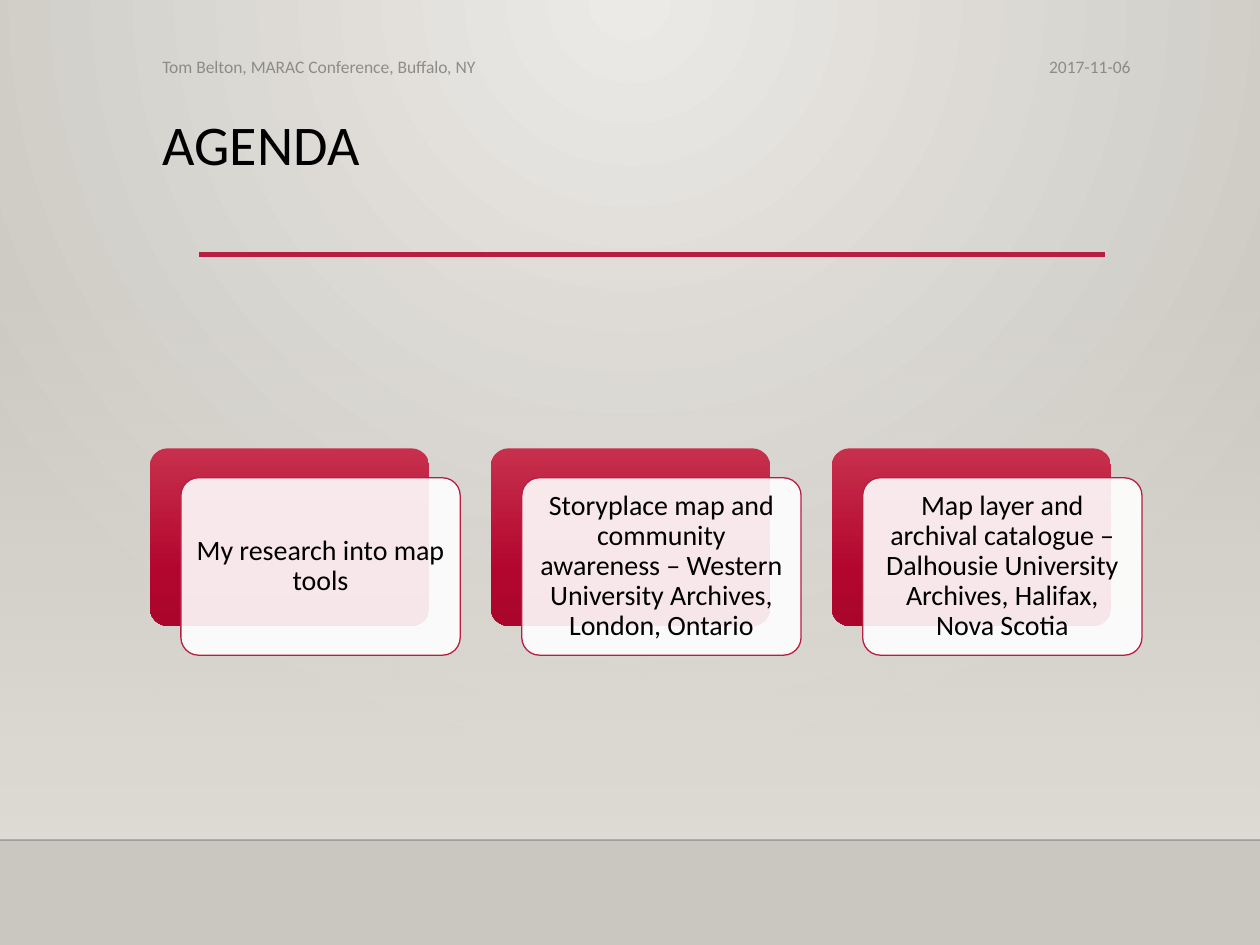
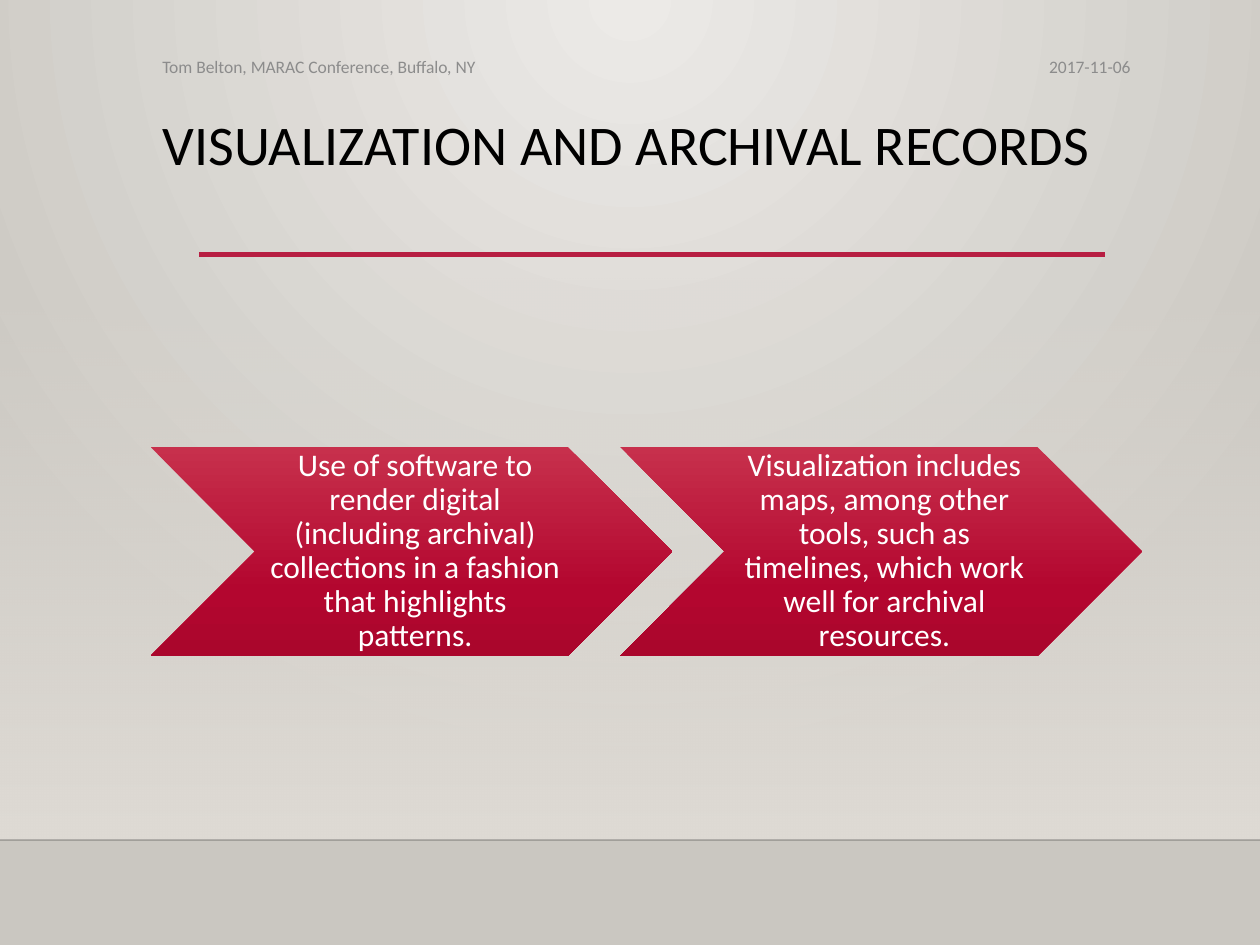
"""Builds two slides of a talk on map tools for archives."""
from pptx import Presentation
from pptx import util as u
from pptx.dml.color import RGBColor
from pptx.enum import shapes, text
from pptx.oxml import parse_xml
from pptx.oxml.ns import nsdecls, qn

Pt = u.Pt
COLORS = {
    "black": "000000", "white": "FFFFFF", "grey": "8C8C8C",
    "accent": "B71E42", "edge": "000001", "band": "DFDBD5",
    "glow": "ECEAE7", "stone": "CAC7C1",
    "red_top": "C7304C", "red_mid": "B3062F", "red_low": "AA062C",
}
RED = [(0, "red_top", 100), (69, "red_mid", 100), (100, "red_low", 100)]
BAND = [(0, "band", 0), (100, "band", 100)]
BACKDROP = [(0, "glow", 100), (100, "stone", 100)]
LINEAR = '<a:lin ang="5400000" scaled="0"/>'
RADIAL = ('<a:path path="circle"><a:fillToRect l="43000" t="0" '
          'r="43000" b="100000"/></a:path>')
LEFT, WIDTH = 85.7, 567.4
CARD_W, CARD_H, CARD_TOP, CARD_STEP = 159.6, 101.4, 256.2, 194.8
CHEVRON_W, CHEVRON_H, CHEVRON_TOP, CHEVRON_STEP = 298.1, 119.3, 255.5, 268.2
SPEAKER = "Tom Belton, MARAC Conference, Buffalo, NY"
DATE = "2017-11-06"


def rgb(name):
    return RGBColor.from_string(COLORS[name])


def set_all(obj, values):
    for name, value in values.items():
        setattr(obj, name, value)


def set_alpha(fill_parent, percent):
    clr = fill_parent.find(".//" + qn("a:srgbClr"))
    clr.append(parse_xml(f'<a:alpha {nsdecls("a")} val="{percent * 1000}"/>'))


def set_gradient(fill, parent, stops, direction):
    fill.background()
    gs = "".join(
        f'<a:gs pos="{pos * 1000}"><a:srgbClr val="{COLORS[name]}">'
        f'<a:alpha val="{alpha * 1000}"/></a:srgbClr></a:gs>'
        for pos, name, alpha in stops)
    grad = parse_xml(f'<a:gradFill {nsdecls("a")} rotWithShape="1">'
                     f'<a:gsLst>{gs}</a:gsLst>{direction}</a:gradFill>')
    parent.replace(parent.find(qn("a:noFill")), grad)


class Deck:
    font = "Calibri"

    def __init__(self):
        self.prs = Presentation()
        self.prs.slide_width, self.prs.slide_height = Pt(720), Pt(540)
        master = self.prs.slide_master
        fill = master.background.fill
        fill.background()
        set_gradient(fill, master.element.find(".//" + qn("p:bgPr")),
                     BACKDROP, RADIAL)

    def slide(self, title):
        self.s = self.prs.slides.add_slide(self.prs.slide_layouts[5])
        self.shape("RECTANGLE", 0, 158.4, 720, 321.3, BAND)
        self.line(0, 480, 720, "edge", 1, 20)
        self.line(113.8, 145.4, 631.4, "accent", 2.5)
        sp = self.s.shapes.title
        set_all(sp, {"left": Pt(LEFT), "top": Pt(63.4),
                     "width": Pt(WIDTH), "height": Pt(82.8)})
        self.put_text(sp, title, 32, "black", "LEFT", "TOP")
        self.label(SPEAKER, LEFT, 350.6, "LEFT")
        self.label(DATE, 446.5, 206.6, "RIGHT")

    def put_text(self, sp, words, size, color, align="CENTER", anchor="MIDDLE",
                 margins=(7.2, 3.6, 7.2, 3.6), spacing=0.9):
        tf = sp.text_frame
        sides = ("left", "top", "right", "bottom")
        set_all(tf, {f"margin_{side}": Pt(m) for side, m in zip(sides, margins)})
        set_all(tf, {"word_wrap": True, "auto_size": text.MSO_AUTO_SIZE.NONE,
                     "vertical_anchor": text.MSO_ANCHOR[anchor]})
        p = tf.paragraphs[0]
        set_all(p, {"alignment": text.PP_ALIGN[align], "line_spacing": spacing})
        r = p.add_run()
        r.text = words
        set_all(r.font, {"name": self.font, "size": Pt(size)})
        r.font.color.rgb = rgb(color)

    def label(self, words, x, w, align):
        sp = self.s.shapes.add_textbox(Pt(x), Pt(25.9), Pt(w), Pt(24.5))
        self.put_text(sp, words, 10, "grey", align, spacing=1.0)

    def line(self, x1, y, x2, color, width, alpha=100):
        sp = self.s.shapes.add_connector(
            shapes.MSO_CONNECTOR.STRAIGHT, Pt(x1), Pt(y), Pt(x2), Pt(y))
        sp.line.color.rgb = rgb(color)
        sp.line.width = Pt(width)
        spPr = sp._element.spPr
        set_alpha(spPr, alpha)
        spPr.append(parse_xml(f'<a:effectLst {nsdecls("a")}/>'))

    def shape(self, kind, x, y, w, h, stops=None):
        sp = self.s.shapes.add_shape(
            shapes.MSO_SHAPE[kind], Pt(x), Pt(y), Pt(w), Pt(h))
        sp.shadow.inherit = False
        sp.line.fill.background()
        if stops:
            set_gradient(sp.fill, sp._element.spPr, stops, LINEAR)
        return sp

    def card(self, words, x):
        back = self.shape("ROUNDED_RECTANGLE", x, CARD_TOP, CARD_W, CARD_H, RED)
        front = self.shape("ROUNDED_RECTANGLE", x + 17.7, CARD_TOP + 16.8,
                           CARD_W, CARD_H)
        for sp in (back, front):
            sp.adjustments[0] = 0.1
        front.fill.solid()
        front.fill.fore_color.rgb = rgb("white")
        set_alpha(front._element.spPr, 90)
        front.line.color.rgb = rgb("accent")
        front.line.width = Pt(0.75)
        self.put_text(front, words, 16, "black", margins=(4.8,) * 4)

    def chevron(self, words, x):
        sp = self.shape("CHEVRON", x, CHEVRON_TOP, CHEVRON_W, CHEVRON_H, RED)
        self.put_text(sp, words, 18, "white", margins=(6, 2, 2, 2))


def main():
    deck = Deck()

    deck.slide("AGENDA")
    topics = [
        "My research into map tools",
        "Storyplace map and community awareness – Western University "
        "Archives, London, Ontario",
        "Map layer and archival catalogue – Dalhousie University Archives, "
        "Halifax, Nova Scotia",
    ]
    for i, topic in enumerate(topics):
        deck.card(topic, LEFT + i * CARD_STEP)

    deck.slide("VISUALIZATION AND ARCHIVAL RECORDS")
    points = [
        "Use of software to render digital (including archival) collections "
        "in a fashion that highlights patterns.",
        "Visualization includes maps, among other tools, such as timelines, "
        "which work well for archival resources.",
    ]
    for i, point in enumerate(points):
        deck.chevron(point, LEFT + 0.5 + i * CHEVRON_STEP)

    deck.prs.save("out.pptx")


if __name__ == "__main__":
    main()
